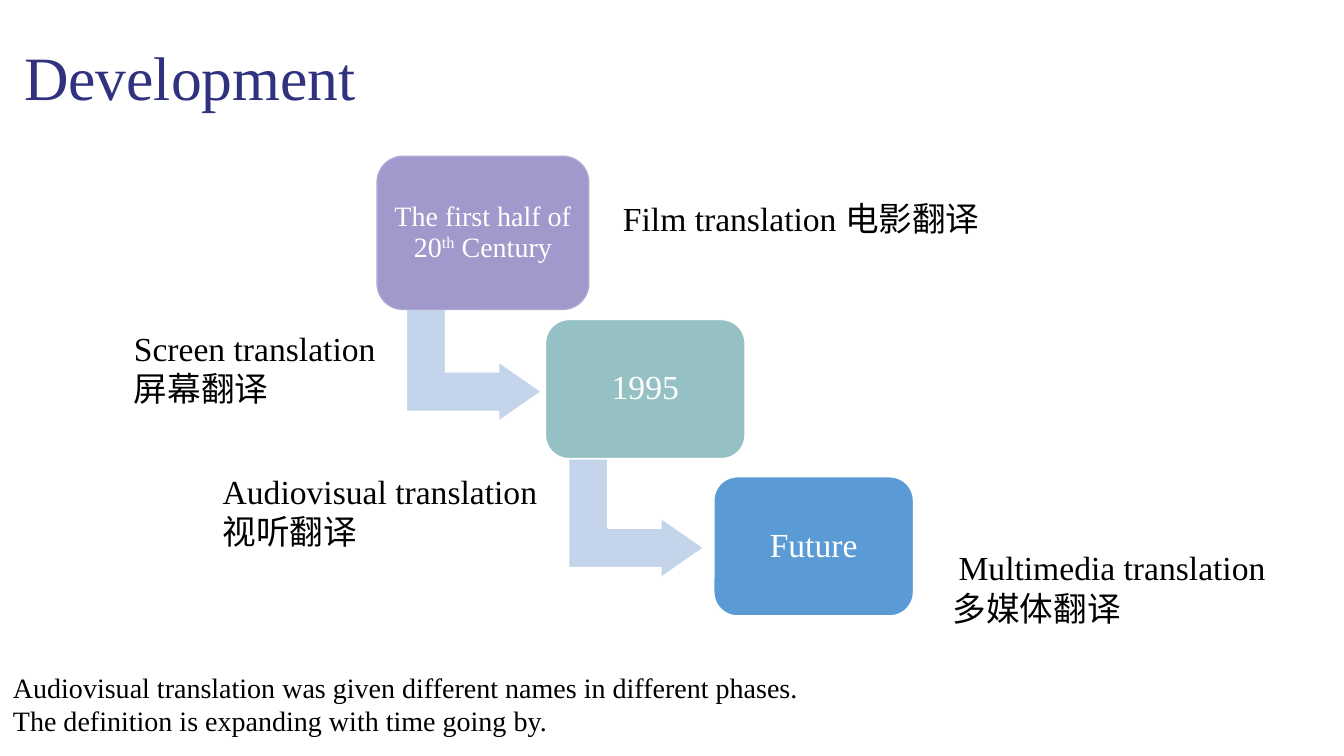
from pptx import Presentation
from pptx.dml.color import RGBColor
from pptx.enum.shapes import MSO_SHAPE
from pptx.enum.text import MSO_ANCHOR, PP_ALIGN
from pptx.util import Emu, Pt

ROUND, BENT = MSO_SHAPE.ROUNDED_RECTANGLE, MSO_SHAPE.BENT_UP_ARROW
TOP, MIDDLE = MSO_ANCHOR.TOP, MSO_ANCHOR.MIDDLE
LEFT, CENTER, JUSTIFY = PP_ALIGN.LEFT, PP_ALIGN.CENTER, PP_ALIGN.JUSTIFY

NAVY = RGBColor(0x31, 0x32, 0x7F)
PURPLE = RGBColor(0xA0, 0x99, 0xCB)
LILAC = RGBColor(0xAF, 0xA8, 0xD3)
TEAL = RGBColor(0x95, 0xC1, 0xC4)
BLUE = RGBColor(0x5B, 0x9B, 0xD5)
PALE = RGBColor(0xC4, 0xD5, 0xEB)
WHITE = RGBColor(0xFF, 0xFF, 0xFF)
BLACK = RGBColor(0, 0, 0)

FONT = "Times New Roman"
SCALE = 9144  # 100 px to the inch


def px(n):
    return Emu(n * SCALE)


class Painter:
    def __init__(self, slide):
        self.slide = slide

    def style(self, para, size, color, align, space=None):
        para.alignment = align
        para.line_spacing = space
        font = para.font
        font.name, font.size = FONT, Pt(size)
        font.color.rgb = color

    def shape(self, kind, box, fill, line, adjust):
        item = self.slide.shapes.add_shape(kind, *map(px, box))
        item.shadow.inherit = False
        item.fill.solid()
        item.fill.fore_color.rgb = fill
        item.line.color.rgb = line
        item.line.width = Pt(1)
        for i, value in enumerate(adjust):
            item.adjustments[i] = value
        return item

    def arrow(self, box):
        self.shape(BENT, box, PALE, WHITE, (0.33, 0.25, 0.36)).rotation = 90

    def step(self, box, runs, size, inset, fill, line):
        """Rounded box; each run is a (text, raised) pair."""
        frame = self.shape(ROUND, box, fill, line, (0.17,)).text_frame
        frame.word_wrap = True
        frame.vertical_anchor = MIDDLE
        frame.margin_left = frame.margin_right = px(inset)
        frame.margin_top = frame.margin_bottom = px(inset)
        para = frame.paragraphs[0]
        self.style(para, size, WHITE, CENTER, 0.9)
        for text, raised in runs:
            run = para.add_run()
            run.text = text
            if raised:
                run.font._element.set("baseline", "30000")

    def text(self, box, lines, size=24, color=BLACK, align=LEFT,
             anchor=TOP, space=None, indent=0, wrap=True):
        frame = self.slide.shapes.add_textbox(*map(px, box)).text_frame
        frame.word_wrap = wrap
        frame.vertical_anchor = anchor
        for i, line in enumerate(lines):
            para = frame.add_paragraph() if i else frame.paragraphs[0]
            para.text = line
            self.style(para, size, color, align, space)
        if indent:
            props = frame.paragraphs[0]._p.get_or_add_pPr()
            props.set("indent", str(px(indent)))


def main():
    deck = Presentation()
    deck.slide_width, deck.slide_height = px(1333), px(750)
    art = Painter(deck.slides.add_slide(deck.slide_layouts[6]))

    # Title
    art.text((14, 7, 1150, 145), ["Development"], 44, NAVY,
             anchor=MIDDLE, space=0.9)

    # Arrows behind the steps
    for left, top in ((411, 292), (572, 447)):
        art.arrow((left, top, 118, 134))

    # Steps
    first = [("The first half of 20", False), ("th", True),
             (" Century", False)]
    art.step((374, 155, 210, 152), first, 20, 8, PURPLE, LILAC)
    art.step((541, 317, 198, 138), [("1995", False)], 24, 10, TEAL, WHITE)
    art.step((708, 473, 198, 138), [("Future", False)], 24, 10, BLUE, WHITE)

    # Names of each phase
    art.text((608, 191, 622, 50), ["Film translation 电影翻译"])
    art.text((123, 320, 262, 91), ["Screen translation", "屏幕翻译"], wrap=False)
    art.text((211, 462, 348, 91), ["Audiovisual translation", "视听翻译"],
             align=JUSTIFY)
    art.text((935, 538, 390, 91), ["Multimedia translation", "多媒体翻译"],
             align=JUSTIFY, indent=6)

    # Summary
    art.text((3, 660, 811, 77), [
        "Audiovisual translation was given different names in different phases.",
        "The definition is expanding with time going by.",
    ], 20, wrap=False)

    deck.save("out.pptx")


if __name__ == "__main__":
    main()
